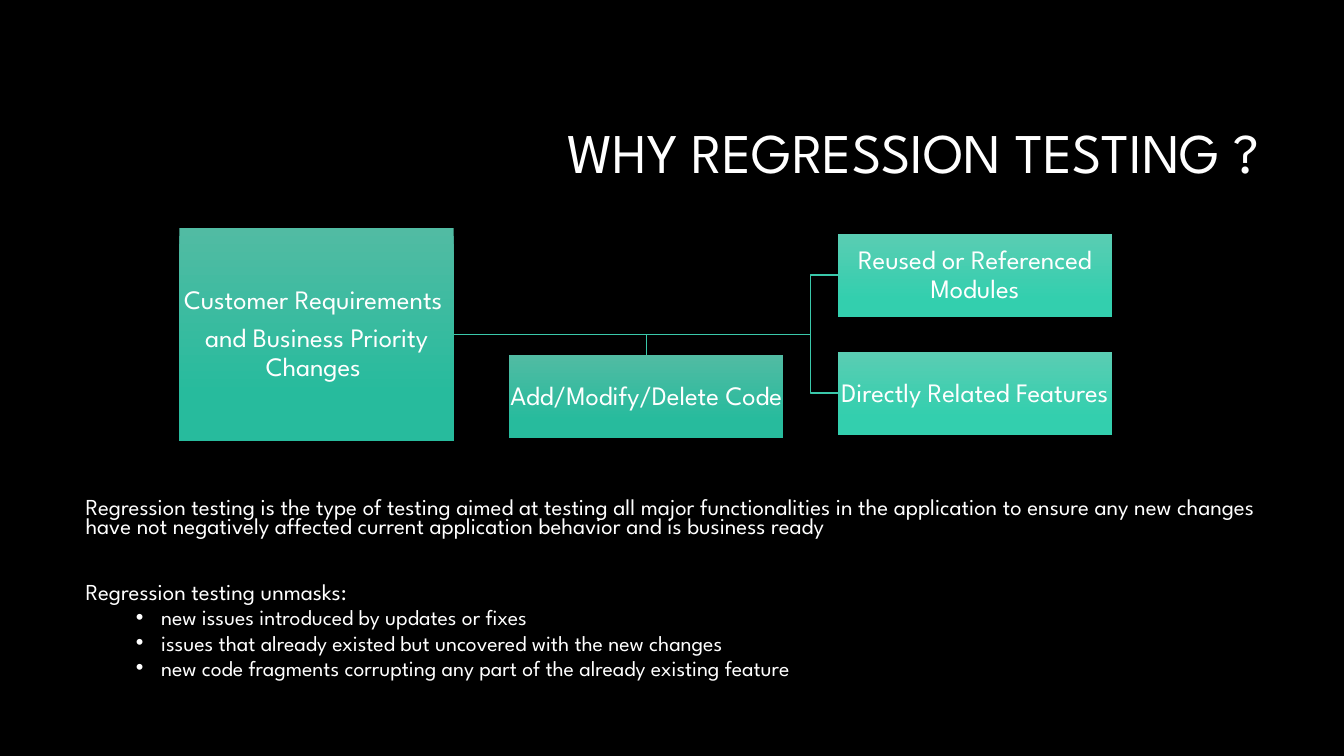
from dataclasses import dataclass
from typing import Any

from lxml import etree
from pptx import Presentation
from pptx.dml.color import RGBColor
from pptx.enum.shapes import MSO_SHAPE
from pptx.enum.text import MSO_ANCHOR, PP_ALIGN
from pptx.oxml.ns import qn
from pptx.util import Inches, Pt

RECT = MSO_SHAPE.RECTANGLE
TOP, MIDDLE = MSO_ANCHOR.TOP, MSO_ANCHOR.MIDDLE
LEFT, CENTER, RIGHT = PP_ALIGN.LEFT, PP_ALIGN.CENTER, PP_ALIGN.RIGHT
FONT = "League Spartan"
WHITE, BLACK, TEAL = "FFFFFF", "000000", "3AC8AA"
DARK = ("51BBA3", "27BB9D")
LIGHT = ("5ACDB3", "33CFAE")
WIDE, LOW = 2.72, 0.83


@dataclass
class Para:
    text: str
    size: float
    align: Any = LEFT
    spacing: float = 0.7
    before: float = 0
    after: float = 0
    bullet: bool = False


@dataclass
class Box:
    left: float
    top: float
    height: float
    shades: tuple[str, str]
    lines: tuple[str, ...]


BOXES = (
    Box(1.78, 2.26, 2.12, DARK,
        ("Customer Requirements ", "and Business Priority Changes ")),
    Box(8.31, 2.32, LOW, LIGHT, ("Reused or Referenced Modules",)),
    Box(8.31, 3.49, LOW, LIGHT, ("Directly Related Features",)),
    Box(5.05, 3.52, LOW, DARK, ("Add/Modify/Delete Code",)),
)
START, BEND = (4.5, 3.32), 8.04
LINKS = (
    ((6.41, 3.32), (6.41, 3.52)),
    ((BEND, 3.32), (BEND, 3.9), (8.31, 3.9)),
    ((BEND, 3.32), (BEND, 2.73), (8.31, 2.73)),
)
ISSUES = (
    "new issues introduced by updates or fixes",
    "issues that already existed but uncovered with the new changes",
    "new code fragments corrupting any part of the already existing feature",
)
BODY = [
    Para("Regression testing is the type of testing aimed at testing all major "
         "functionalities in the application to ensure any new changes have not "
         "negatively affected current application behavior and is business ready", 16.3),
    Para("Regression testing unmasks:", 16.3, before=33.6),
    *(Para(issue, 15.5, before=5, bullet=True) for issue in ISSUES),
]


def color(code: str) -> RGBColor:
    return RGBColor.from_string(code)


def apply(target: Any, values: dict[str, Any]) -> None:
    for name, value in values.items():
        setattr(target, name, value)


def write(frame: Any, paras: list[Para], anchor: Any, inset: dict[str, float]) -> None:
    apply(frame, {"word_wrap": True, "vertical_anchor": anchor})
    apply(frame, {f"margin_{side}": Inches(size) for side, size in inset.items()})
    for index, item in enumerate(paras):
        para = frame.add_paragraph() if index else frame.paragraphs[0]
        if item.bullet:
            props = para._p.get_or_add_pPr()
            props.set("marL", str(Inches(0.75)))
            props.set("indent", str(Inches(-0.25)))
            etree.SubElement(props, qn("a:buFont")).set("typeface", "Arial")
            etree.SubElement(props, qn("a:buChar")).set("char", "•")
        apply(para, {"alignment": item.align, "line_spacing": item.spacing,
                     "space_before": Pt(item.before), "space_after": Pt(item.after)})
        run = para.add_run()
        run.text = item.text
        apply(run.font, {"name": FONT, "size": Pt(item.size)})
        run.font.color.rgb = color(WHITE)


def label(slide: Any, area: tuple[float, ...], paras: list[Para], anchor: Any) -> None:
    shape = slide.shapes.add_textbox(*map(Inches, area))
    write(shape.text_frame, paras, anchor,
          {"left": 0.1, "right": 0.1, "top": 0.05, "bottom": 0.05})


def link(slide: Any, points: tuple[tuple[float, float], ...]) -> None:
    first, *rest = [(Inches(x), Inches(y)) for x, y in (START, *points)]
    maker = slide.shapes.build_freeform(*first)
    maker.add_line_segments(rest, close=False)
    shape = maker.convert_to_shape()
    shape.shadow.inherit = False
    shape.fill.background()
    shape.line.color.rgb = color(TEAL)
    shape.line.width = Pt(1)


def block(slide: Any, box: Box) -> None:
    area = (box.left, box.top, WIDE, box.height)
    shape = slide.shapes.add_shape(RECT, *map(Inches, area))
    shape.shadow.inherit = False
    shape.line.fill.background()
    shape.fill.gradient()
    shape.fill.gradient_angle = 270
    for stop, shade, place in zip(shape.fill.gradient_stops, box.shades, (0, 0.78)):
        stop.color.rgb = color(shade)
        stop.position = place
    last = len(box.lines) - 1
    paras = [Para(line, 19, CENTER, 0.9, after=6.65 if index < last else 0)
             for index, line in enumerate(box.lines)]
    write(shape.text_frame, paras, MIDDLE,
          dict.fromkeys(("left", "right", "top", "bottom"), 0.01))


def main() -> None:
    deck = Presentation()
    apply(deck, {"slide_width": Inches(13.33), "slide_height": Inches(7.5)})
    slide = deck.slides.add_slide(deck.slide_layouts[6])
    slide.background.fill.solid()
    slide.background.fill.fore_color.rgb = color(BLACK)
    title = Para("WHY REGRESSION TESTING ?", 40, RIGHT, 0.9)
    label(slide, (3.17, 0.84, 9.42, 1.41), [title], MIDDLE)
    label(slide, (0.75, 4.91, 11.84, 2.11), BODY, TOP)
    for points in LINKS:
        link(slide, points)
    for box in BOXES:
        block(slide, box)
    deck.save("out.pptx")


if __name__ == "__main__":
    main()
